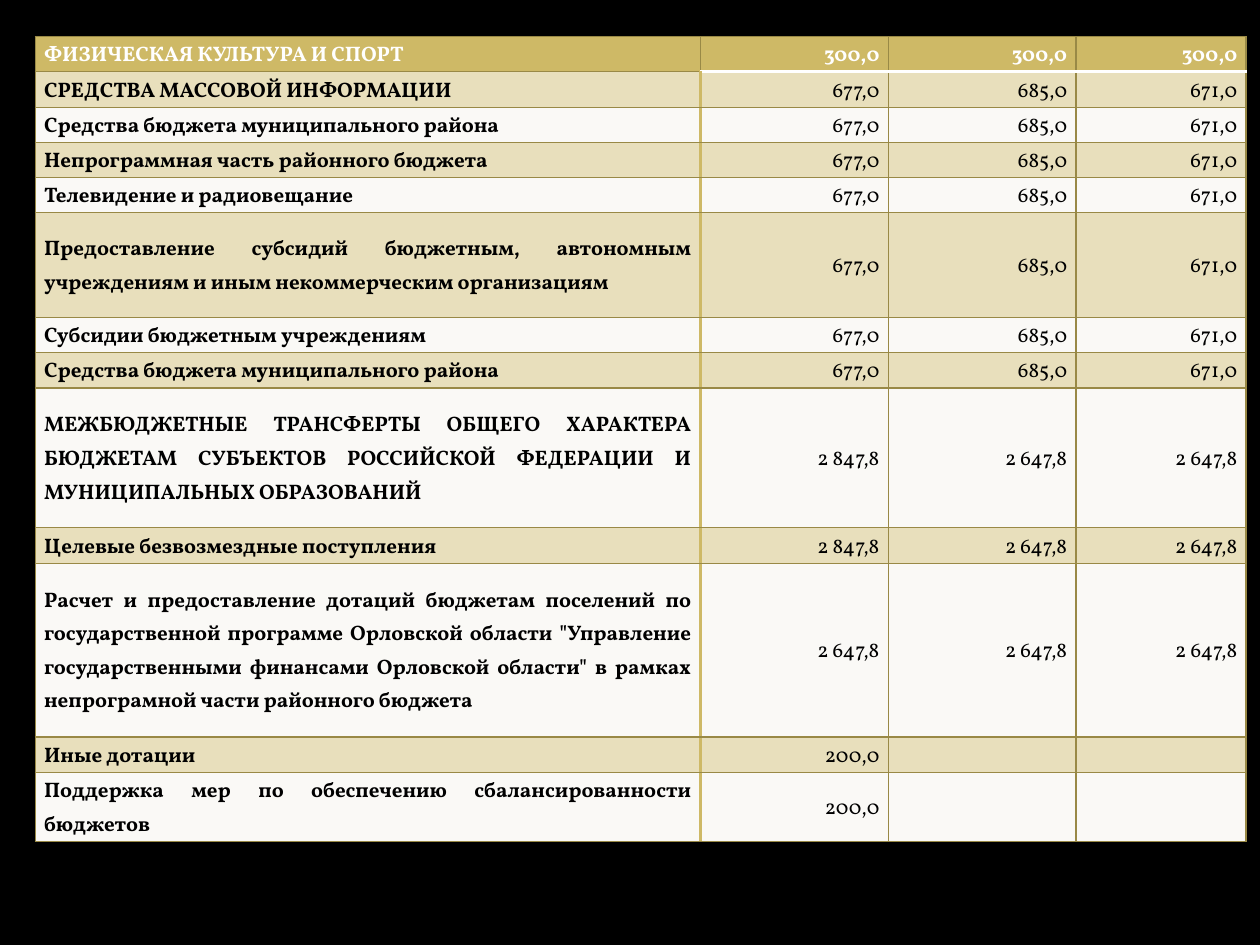
from lxml import etree
from pptx import Presentation
from pptx.dml.color import RGBColor
from pptx.enum.text import MSO_ANCHOR, PP_ALIGN
from pptx.oxml.ns import qn
from pptx.util import Inches, Pt

JUSTIFY, RIGHT = PP_ALIGN.JUSTIFY, PP_ALIGN.RIGHT
MIDDLE = MSO_ANCHOR.MIDDLE

COLORS = {
    "background": "000000",
    "header": "CEB966",
    "band": "E8DFBC",
    "plain": "FAF9F6",
    "grid": "998946",
    "text": "000000",
    "header_text": "FFFFFF",
    "header_rule": "FFFFFF",
    "name_rule": "CEB966",
}
FONT = "Vollkorn"
FONT_SIZE = 12
LINE_SPACING = 1.15
THIN, THICK = 0.75, 2

COLUMN_WIDTHS = [5.28, 1.49, 1.49, 1.35]
LINE_ROW = 0.28
MEDIA = ["677,0", "685,0", "671,0"]
TRANSFERS = ["2 847,8", "2 647,8", "2 647,8"]
GRANTS = ["2 647,8"] * 3
SUPPORT = ["200,0", "", ""]

# Each row: height, budget item, amounts by year
BUDGET = [
    (LINE_ROW, "ФИЗИЧЕСКАЯ КУЛЬТУРА И СПОРТ", ["300,0"] * 3),
    (LINE_ROW, "СРЕДСТВА МАССОВОЙ ИНФОРМАЦИИ", MEDIA),
    (LINE_ROW, "Средства бюджета муниципального района", MEDIA),
    (LINE_ROW, "Непрограммная часть районного бюджета", MEDIA),
    (LINE_ROW, "Телевидение и радиовещание", MEDIA),
    (0.83, "Предоставление субсидий бюджетным, автономным учреждениям "
           "и иным некоммерческим организациям", MEDIA),
    (LINE_ROW, "Субсидии бюджетным учреждениям", MEDIA),
    (LINE_ROW, "Средства бюджета муниципального района", MEDIA),
    (1.11, "МЕЖБЮДЖЕТНЫЕ ТРАНСФЕРТЫ ОБЩЕГО ХАРАКТЕРА БЮДЖЕТАМ СУБЪЕКТОВ "
           "РОССИЙСКОЙ ФЕДЕРАЦИИ И МУНИЦИПАЛЬНЫХ ОБРАЗОВАНИЙ", TRANSFERS),
    (LINE_ROW, "Целевые безвозмездные поступления", TRANSFERS),
    (1.38, "Расчет и предоставление дотаций бюджетам поселений по "
           "государственной программе Орловской области \"Управление "
           "государственными финансами Орловской области\" в рамках "
           "непрограмной части районного бюджета", GRANTS),
    (LINE_ROW, "Иные дотации", SUPPORT),
    (0.55, "Поддержка мер по обеспечению сбалансированности бюджетов", SUPPORT),
]


class BudgetSlide:
    def __init__(self, presentation):
        self.slide = presentation.slides.add_slide(presentation.slide_layouts[6])
        fill = self.slide.background.fill
        fill.solid()
        fill.fore_color.rgb = self.color("background")

    def color(self, name):
        return RGBColor.from_string(COLORS[name])

    def table(self, left, top, widths, budget):
        heights = [height for height, _, _ in budget]
        table = self.slide.shapes.add_table(
            len(budget), len(widths), Inches(left), Inches(top),
            Inches(sum(widths)), Inches(sum(heights))).table
        table.first_row = table.horz_banding = False
        for column, width in zip(table.columns, widths):
            column.width = Inches(width)
        for row, height in zip(table.rows, heights):
            row.height = Inches(height)
        for r, (_, item, amounts) in enumerate(budget):
            for c, text in enumerate([item, *amounts]):
                cell = table.cell(r, c)
                self.borders(cell, r, c)
                self.fill(cell, r)
                self.text(cell, text, r, c)

    def borders(self, cell, r, c):
        """Thin grid, with heavy rules under the top amounts and beside the items."""
        edges = dict.fromkeys(("a:lnL", "a:lnR", "a:lnT", "a:lnB"), ("grid", THIN))
        if r > 0 and c < 2:
            edges["a:lnR" if c == 0 else "a:lnL"] = ("name_rule", THICK)
        if c > 0 and r < 2:
            edges["a:lnB" if r == 0 else "a:lnT"] = ("header_rule", THICK)
        properties = cell._tc.get_or_add_tcPr()
        for tag, (color, width) in edges.items():
            line = etree.SubElement(properties, qn(tag), w=str(Pt(width)))
            solid = etree.SubElement(line, qn("a:solidFill"))
            etree.SubElement(solid, qn("a:srgbClr"), val=COLORS[color])

    def fill(self, cell, r):
        cell.fill.solid()
        cell.fill.fore_color.rgb = self.color(
            "header" if r == 0 else "band" if r % 2 else "plain")

    def text(self, cell, text, r, c):
        cell.vertical_anchor = MIDDLE
        cell.margin_left = cell.margin_right = Inches(0.07)
        cell.margin_top = cell.margin_bottom = 0
        paragraph = cell.text_frame.paragraphs[0]
        paragraph.alignment = RIGHT if c else JUSTIFY
        paragraph.line_spacing = LINE_SPACING
        if not text:
            # Keeps an empty cell from stretching its row
            paragraph._p.get_or_add_endParaRPr().set("sz", str(FONT_SIZE * 100))
            return
        run = paragraph.add_run()
        run.text = text
        run.font.name = FONT
        run.font.size = Pt(FONT_SIZE)
        run.font.bold = r == 0 or c == 0
        run.font.color.rgb = self.color("text" if r else "header_text")


def main():
    presentation = Presentation()
    presentation.slide_width = Inches(10)
    presentation.slide_height = Inches(7.5)
    BudgetSlide(presentation).table(0.28, 0.29, COLUMN_WIDTHS, BUDGET)
    presentation.save("out.pptx")


if __name__ == "__main__":
    main()
